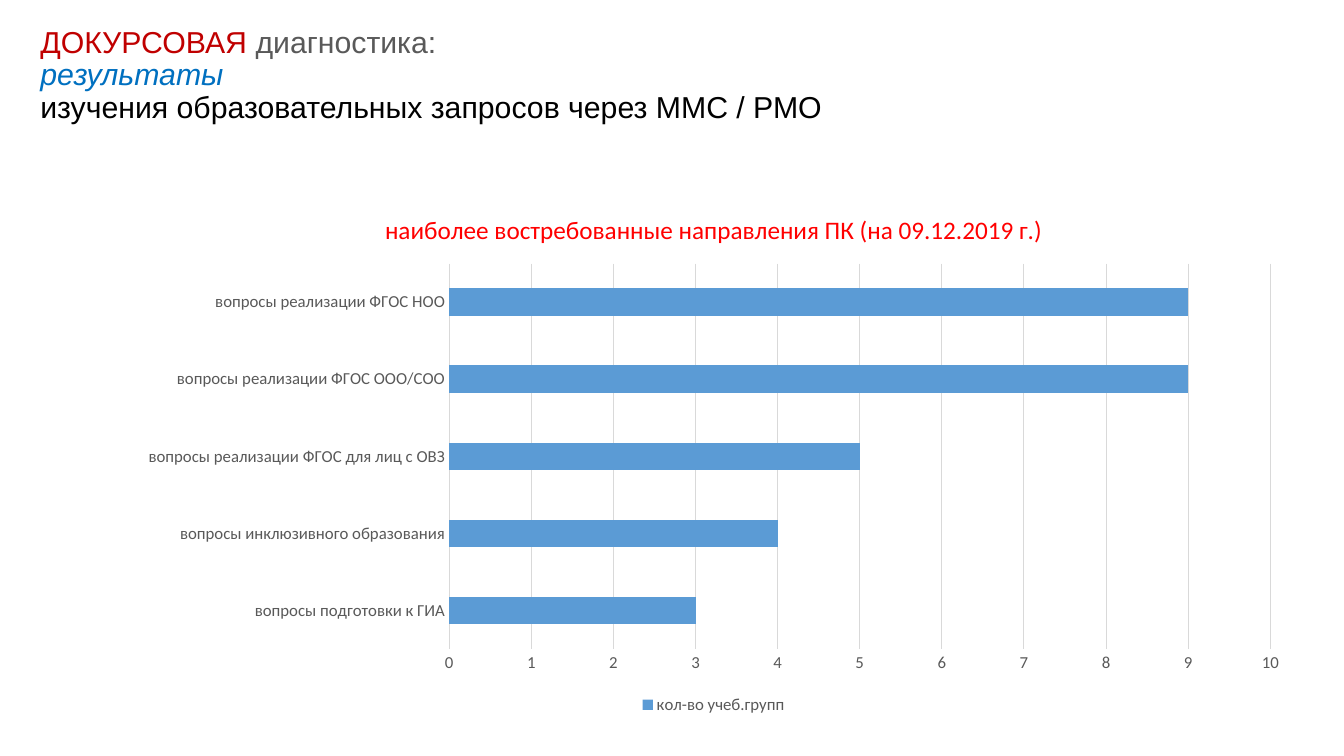
from pptx import Presentation
from pptx.chart.data import CategoryChartData
from pptx.dml.color import RGBColor
from pptx.enum import chart as ch, text
from pptx.util import Pt

GREY, GRID = "595959", "D9D9D9"
TITLE_RUNS = [  # text, colour, italic, line break after
    ("ДОКУРСОВАЯ ", "C00000", False, False),
    ("диагностика:", GREY, False, True),
    ("результаты", "0070C0", True, True),
    ("изучения образовательных запросов через ММС / РМО", "000000", False, False),
]
GROUPS = {
    "вопросы подготовки к ГИА": 3,
    "вопросы инклюзивного образования": 4,
    "вопросы реализации ФГОС для лиц с ОВЗ": 5,
    "вопросы реализации ФГОС ООО/СОО": 9,
    "вопросы реализации ФГОС НОО": 9,
}


def rgb(color):
    return RGBColor.from_string(color)


def set_font(font, size, color, name="Calibri"):
    font.name, font.size, font.bold = name, Pt(size), False
    font.color.rgb = rgb(color)


def set_line(line, color):
    line.color.rgb = rgb(color)
    line.width = Pt(0.75)


def add_title(s, x, y, w, h):
    sp = s.shapes.title
    sp.left, sp.top, sp.width, sp.height = Pt(x), Pt(y), Pt(w), Pt(h)
    tf = sp.text_frame
    tf.word_wrap = True
    tf.auto_size = text.MSO_AUTO_SIZE.NONE
    tf.vertical_anchor = text.MSO_ANCHOR.TOP
    tf.margin_top = Pt(5)
    p = tf.paragraphs[0]
    p.alignment = text.PP_ALIGN.LEFT
    p.line_spacing = 0.9
    p.space_before = Pt(0)
    for words, color, italic, line_break in TITLE_RUNS:
        r = p.add_run()
        r.text = words
        set_font(r.font, 21.6, color, "Arial")
        r.font.italic = italic
        if line_break:
            p.add_line_break()


def add_groups_chart(s, x, y, w, h):
    data = CategoryChartData()
    data.categories = list(GROUPS)
    data.add_series("кол-во учеб.групп", list(GROUPS.values()))
    chart = s.shapes.add_chart(ch.XL_CHART_TYPE.BAR_CLUSTERED,
                               Pt(x), Pt(y), Pt(w), Pt(h), data).chart
    set_font(chart.font, 12, GREY)

    # Chart title
    chart.has_title = True
    chart.chart_title.include_in_layout = False
    p = chart.chart_title.text_frame.paragraphs[0]
    r = p.add_run()
    r.text = "наиболее востребованные направления ПК (на 09.12.2019 г.)"
    set_font(r.font, 18, "FF0000")

    # Bars
    plot = chart.plots[0]
    plot.gap_width = 182
    plot.vary_by_categories = False
    fill = plot.series[0].format.fill
    fill.solid()
    fill.fore_color.rgb = rgb("5B9BD5")

    # Axes
    for axis in (chart.category_axis, chart.value_axis):
        axis.major_tick_mark = axis.minor_tick_mark = ch.XL_TICK_MARK.NONE
        set_font(axis.tick_labels.font, 12, GREY)
    set_line(chart.category_axis.format.line, GRID)
    values = chart.value_axis
    values.minimum_scale, values.maximum_scale, values.major_unit = 0, 10, 1
    values.format.line.fill.background()
    values.has_major_gridlines = True
    set_line(values.major_gridlines.format.line, GRID)

    # Legend
    chart.has_legend = True
    chart.legend.position = ch.XL_LEGEND_POSITION.BOTTOM
    chart.legend.include_in_layout = False
    set_font(chart.legend.font, 12, GREY)


def main():
    prs = Presentation()
    prs.slide_width, prs.slide_height = Pt(960), Pt(540)
    s = prs.slides.add_slide(prs.slide_layouts[5])
    add_title(s, 21.6, 14.4, 828, 103.7)
    add_groups_chart(s, 89.3, 136.8, 841, 376.6)
    prs.save("out.pptx")


if __name__ == "__main__":
    main()
